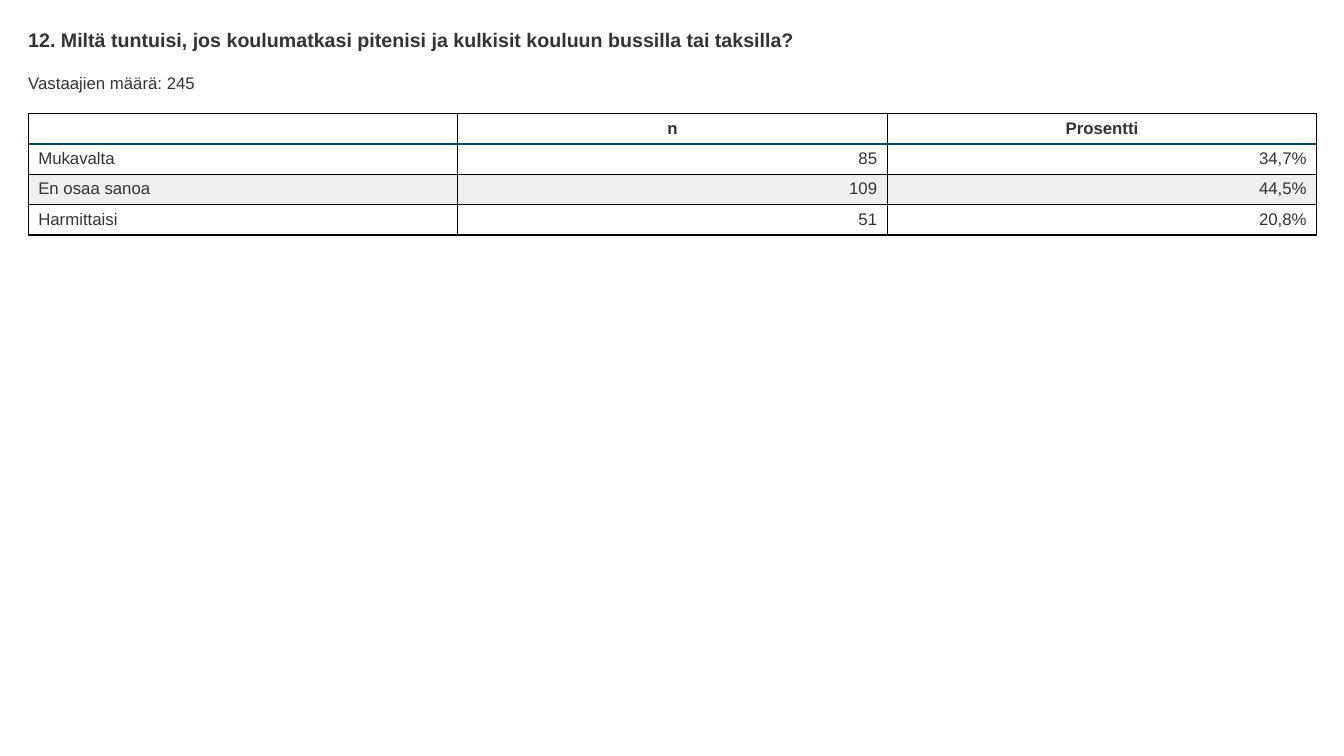
from lxml.etree import SubElement
from pptx import Presentation
from pptx.dml.color import RGBColor
from pptx.enum.text import MSO_ANCHOR, PP_ALIGN
from pptx.oxml import parse_xml
from pptx.oxml.ns import nsdecls, qn
from pptx.util import Inches, Pt

COLORS = {"text": "333333", "rule": "124456", "grid": "000000",
          "plain": "FFFFFF", "band": "EFEFEF"}
LEFT, WIDTH, ROW = 0.28, 12.78, 0.3


def write(para, text, size, bold=False):
    run = para.add_run()
    run.text = text
    look = {"name": "Arial", "size": Pt(size), "bold": bold}
    for key, value in look.items():
        setattr(run.font, key, value)
    run.font.color.rgb = RGBColor.from_string(COLORS["text"])


def border(cell, sides):
    """Draw cell edges, given as (side, color name, points) in L, R, T, B order."""
    props = cell._tc.get_or_add_tcPr()
    for i, (side, color, points) in enumerate(sides):
        props.insert(i, parse_xml(
            f'<a:ln{side} {nsdecls("a")} w="{Pt(points)}"><a:solidFill>'
            f'<a:srgbClr val="{COLORS[color]}"/></a:solidFill></a:ln{side}>'))


prs = Presentation()
prs.slide_width, prs.slide_height = Inches(13.33), Inches(7.5)
slide = prs.slides.add_slide(prs.slide_layouts[6])

heads = [
    ("12. Miltä tuntuisi, jos koulumatkasi pitenisi ja kulkisit kouluun bussilla tai taksilla?",
     0.28, 0.23, 14, True),
    ("Vastaajien määrä: 245", 0.72, 0.2, 12, False),
]
for text, top, height, size, bold in heads:
    frame = slide.shapes.add_textbox(
        Inches(LEFT), Inches(top), Inches(WIDTH), Inches(height)).text_frame
    frame.word_wrap = True
    for side in ("left", "right", "top", "bottom"):
        setattr(frame, f"margin_{side}", 0)
    write(frame.paragraphs[0], text, size, bold)

rows = [
    ("", "n", "Prosentti"),
    ("Mukavalta", "85", "34,7%"),
    ("En osaa sanoa", "109", "44,5%"),
    ("Harmittaisi", "51", "20,8%"),
]
table = slide.shapes.add_table(
    len(rows), len(rows[0]), Inches(LEFT), Inches(1.13),
    Inches(WIDTH), Inches(ROW * len(rows))).table
for column in table.columns:
    column.width = Inches(WIDTH / len(rows[0]))

for r, row in enumerate(rows):
    table.rows[r].height = Inches(ROW)
    for c, text in enumerate(row):
        cell = table.cell(r, c)
        cell.vertical_anchor = MSO_ANCHOR.TOP
        cell.fill.solid()
        cell.fill.fore_color.rgb = RGBColor.from_string(
            COLORS["band" if r == 2 else "plain"])
        grid, rule = ("grid", 1), ("rule", 2)
        border(cell, [("L", *grid), ("R", *grid),
                      ("T", *(rule if r == 1 else grid)),
                      ("B", *(rule if r == 0 else grid))])
        para = cell.text_frame.paragraphs[0]
        if r == 0:
            para.alignment = PP_ALIGN.CENTER
        else:
            para.alignment = PP_ALIGN.RIGHT if c else PP_ALIGN.LEFT
        if text:
            write(para, text, 12, r == 0)
        else:
            SubElement(para._p, qn("a:endParaRPr"), sz="1200")

prs.save("out.pptx")
